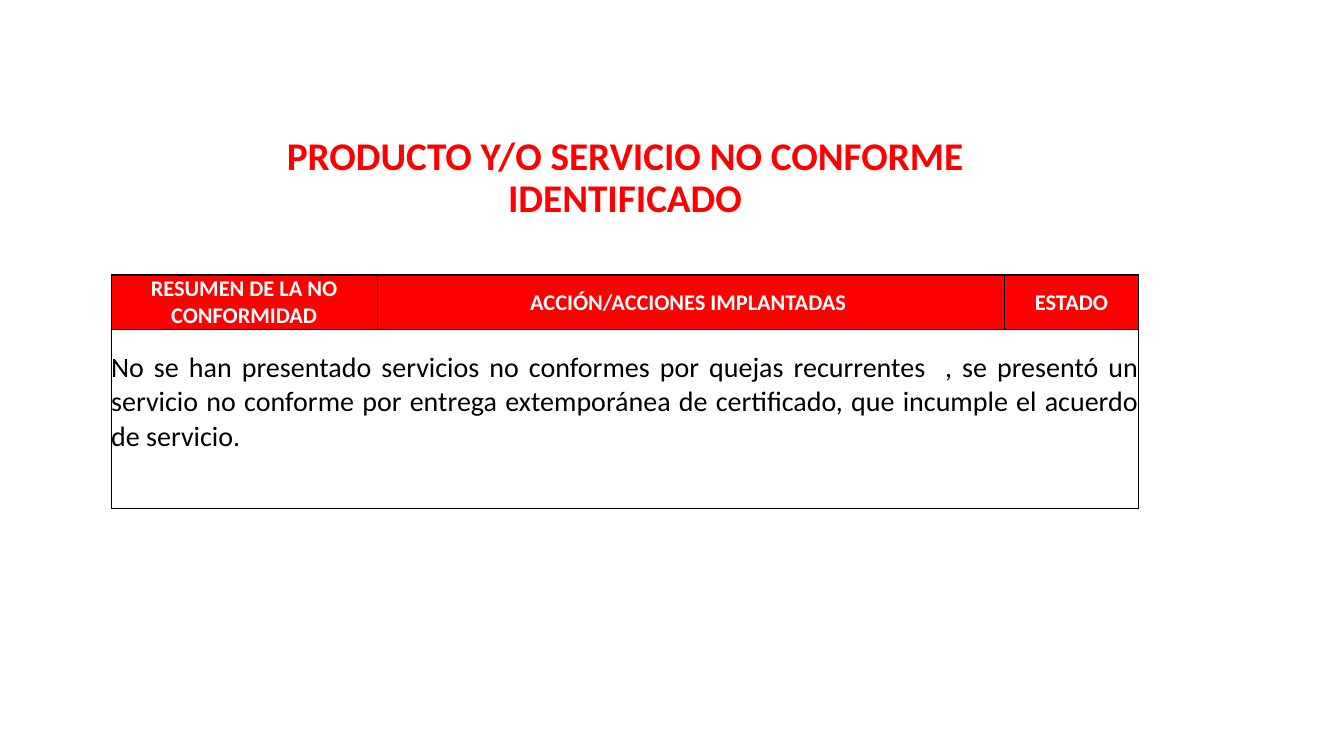
import pptx
import pptx.util
import pptx.dml.color
import pptx.enum.text
import pptx.oxml
import pptx.oxml.ns

Pt = pptx.util.Pt
RGBColor = pptx.dml.color.RGBColor
ALIGN = pptx.enum.text.PP_ALIGN
ANCHOR = pptx.enum.text.MSO_ANCHOR

RED = RGBColor(0xFF, 0x00, 0x00)
WHITE = RGBColor(0xFF, 0xFF, 0xFF)
BLACK = RGBColor(0x00, 0x00, 0x00)

TITLE = "PRODUCTO Y/O SERVICIO NO CONFORME IDENTIFICADO"
HEADERS = ["RESUMEN DE LA NO CONFORMIDAD", "ACCIÓN/ACCIONES IMPLANTADAS ", "ESTADO"]
SUMMARY = (
    "No se han presentado servicios no conformes por quejas recurrentes  , "
    "se presentó un servicio no conforme por entrega extemporánea de "
    "certificado, que incumple el acuerdo de servicio."
)
COLUMN_WIDTHS = [190, 448, 96]
ROW_HEIGHTS = [39.2, 127.4]


def write_text(tf, text, size=16, color=BLACK, bold=False, align=ALIGN.CENTER, spacing=1.0):
    """Put one formatted paragraph in a text frame."""
    tf.word_wrap = True
    p = tf.paragraphs[0]
    p.alignment = align
    p.line_spacing = spacing
    r = p.add_run()
    r.text = text
    r.font.name = "Calibri"
    r.font.size = Pt(size)
    r.font.bold = bold
    r.font.color.rgb = color


def format_cell(cell, fill, bottom=0):
    """Give a cell its fill, margins, anchor and black borders."""
    cell.fill.solid()
    cell.fill.fore_color.rgb = fill
    cell.vertical_anchor = ANCHOR.MIDDLE
    cell.margin_left = cell.margin_right = cell.margin_top = 0
    cell.margin_bottom = Pt(bottom)
    tcPr = cell._tc.get_or_add_tcPr()
    for i, side in enumerate("LRTB"):
        ln = pptx.oxml.parse_xml(
            f'<a:ln{side} {pptx.oxml.ns.nsdecls("a")} w="{Pt(1)}"><a:solidFill>'
            f'<a:srgbClr val="{BLACK}"/></a:solidFill></a:ln{side}>'
        )
        tcPr.insert(i, ln)


def add_title(s, left, top, width, height):
    """Add the slide heading at the bottom of its box."""
    sp = s.shapes.add_textbox(Pt(left), Pt(top), Pt(width), Pt(height))
    tf = sp.text_frame
    tf.vertical_anchor = ANCHOR.BOTTOM
    write_text(tf, TITLE, size=28, color=RED, bold=True, spacing=0.9)


def add_nonconformity_table(s, left, top):
    """Add the table with its header row and merged summary row."""
    frame = s.shapes.add_table(
        len(ROW_HEIGHTS), len(COLUMN_WIDTHS), Pt(left), Pt(top),
        Pt(sum(COLUMN_WIDTHS)), Pt(sum(ROW_HEIGHTS)),
    )
    table = frame.table
    table.horz_banding = False
    for column, width in zip(table.columns, COLUMN_WIDTHS):
        column.width = Pt(width)
    for row, height in zip(table.rows, ROW_HEIGHTS):
        row.height = Pt(height)
    for i, header in enumerate(HEADERS):
        format_cell(table.cell(0, i), RED)
        write_text(table.cell(0, i).text_frame, header, color=WHITE, bold=True)
        format_cell(table.cell(1, i), WHITE, bottom=24)
    summary = table.cell(1, 0)
    summary.merge(table.cell(1, len(HEADERS) - 1))
    write_text(summary.text_frame, SUMMARY, size=20, align=ALIGN.JUSTIFY)


def main():
    """Build and save the slide."""
    prs = pptx.Presentation()
    prs.slide_width, prs.slide_height = Pt(960), Pt(540)
    s = prs.slides.add_slide(prs.slide_layouts[6])
    add_title(s, 117.4, 69.1, 658, 92.2)
    add_nonconformity_table(s, 79.4, 196.4)
    prs.save("out.pptx")


if __name__ == "__main__":
    main()
